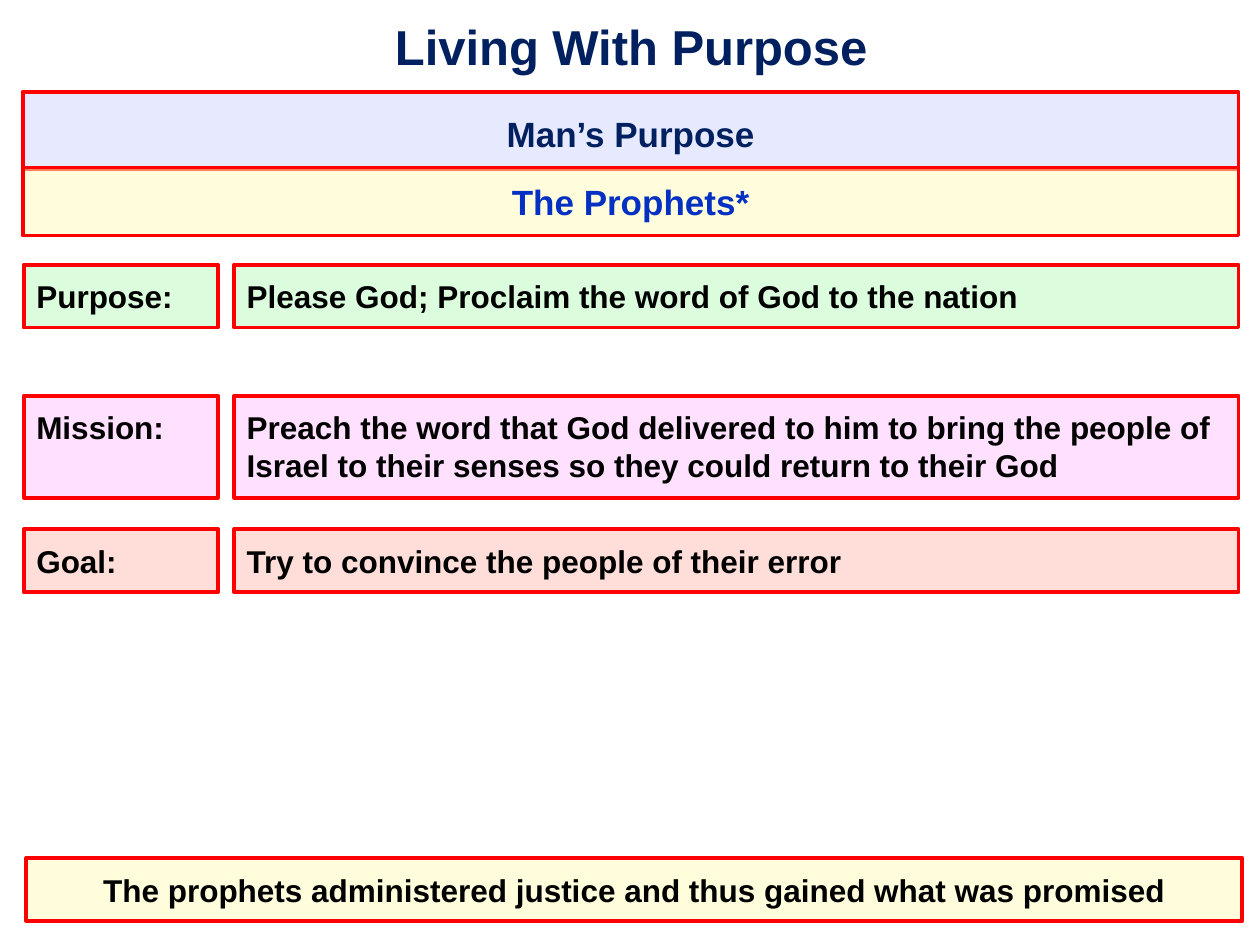
from lxml import etree
from pptx import Presentation
from pptx.dml.color import RGBColor
from pptx.enum.shapes import MSO_SHAPE
from pptx.enum.text import MSO_ANCHOR, MSO_AUTO_SIZE, PP_ALIGN
from pptx.oxml.ns import qn
from pptx.util import Inches, Pt

RECT = MSO_SHAPE.RECTANGLE
TOP, MIDDLE = MSO_ANCHOR.TOP, MSO_ANCHOR.MIDDLE
LEFT, CENTER = PP_ALIGN.LEFT, PP_ALIGN.CENTER
GROW = MSO_AUTO_SIZE.SHAPE_TO_FIT_TEXT


def add_text(sp, text, size=18, color="000000", align=LEFT, anchor=TOP,
             margins=(0.1, 0.1, 0.1, 0.1), spacing=None):
    tf = sp.text_frame
    tf.word_wrap = True
    tf.vertical_anchor = anchor
    tf.margin_left, tf.margin_top, tf.margin_right, tf.margin_bottom = map(Inches, margins)
    p = tf.paragraphs[0]
    p.alignment = align
    if spacing:
        p.line_spacing = spacing
    r = p.add_run()
    r.text = text
    r.font.name = "Arial"
    r.font.size = Pt(size)
    r.font.bold = True
    r.font.color.rgb = RGBColor.from_string(color)


def add_box(x, y, w, h, fill, opacity, text, **fmt):
    sp = s.shapes.add_shape(RECT, Inches(x), Inches(y), Inches(w), Inches(h))
    sp.shadow.inherit = False
    sp.fill.solid()
    sp.fill.fore_color.rgb = RGBColor.from_string(fill)
    clr = sp._element.spPr.find(qn("a:solidFill")).find(qn("a:srgbClr"))
    etree.SubElement(clr, qn("a:alpha")).set("val", str(opacity * 1000))
    sp.line.color.rgb = RGBColor.from_string("FF0000")
    sp.line.width = Pt(2.25)
    add_text(sp, text, **fmt)
    sp.text_frame.auto_size = GROW


prs = Presentation()
prs.slide_width, prs.slide_height = Inches(10), Inches(7.5)
s = prs.slides.add_slide(prs.slide_layouts[6])

title = s.shapes.add_textbox(Inches(0.14), Inches(0.02), Inches(9.78), Inches(0.69))
add_text(title, "Living With Purpose", size=28, color="002060", align=CENTER,
         anchor=MIDDLE, margins=(0.1, 0.06, 0.14, 0.06))

add_box(0.18, 0.73, 9.65, 0.61, "D0D6FF", 50, "Man’s Purpose",
        size=20, color="002060", align=CENTER, spacing=1.2)
add_box(0.18, 1.33, 9.65, 0.54, "FFFDB8", 50, "The Prophets*",
        size=20, color="0530C4", align=CENTER)

rows = [
    (2.1, 0.5, "73FB79", 25, "Purpose:",
     "Please God; Proclaim the word of God to the nation"),
    (3.14, 0.81, "FF85FF", 25, "Mission:",
     "Preach the word that God delivered to him to bring the people of Israel "
     "to their senses so they could return to their God"),
    (4.2, 0.5, "FF2600", 15, "Goal:", "Try to convince the people of their error"),
]
for y, h, fill, opacity, label, detail in rows:
    add_box(0.19, y, 1.54, h, fill, opacity, label)
    add_box(1.86, y, 7.97, h, fill, opacity, detail)

add_box(0.21, 6.81, 9.65, 0.5, "FFFDB8", 50,
        "The prophets administered justice and thus gained what was promised",
        align=CENTER)

prs.save("out.pptx")
